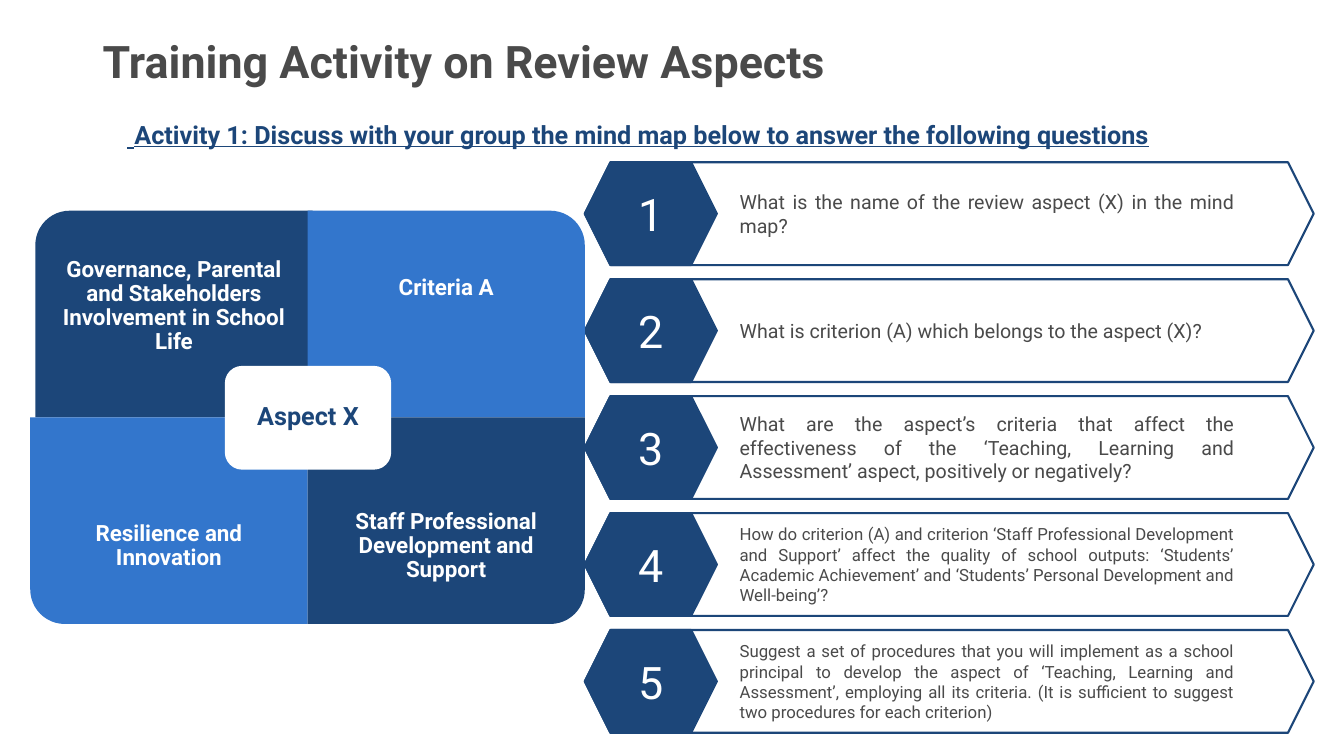
from dataclasses import dataclass

from pptx import Presentation
from pptx.dml.color import RGBColor
from pptx.enum.shapes import MSO_SHAPE
from pptx.enum.text import MSO_ANCHOR, PP_ALIGN
from pptx.util import Emu, Pt

PX = 9144  # one px is a hundredth of an inch


@dataclass(frozen=True)
class Theme:
    font: str = "Roboto"
    navy: str = "1C4679"
    blue: str = "3376CC"
    grey: str = "4A4A4A"
    white: str = "FFFFFF"
    title: int = 32
    number: int = 32
    subtitle: int = 18
    centre: int = 18
    tile: int = 16
    question: int = 14
    long_question: int = 12


THEME = Theme()

QUESTIONS = [
    ("What is the name of the review aspect (X) in the mind map?", THEME.question),
    ("What is criterion (A) which belongs to the aspect (X)?", THEME.question),
    ("What are the aspect’s criteria that affect the effectiveness of the "
     "‘Teaching, Learning and Assessment’ aspect, positively or negatively?",
     THEME.question),
    ("How do criterion (A) and criterion ‘Staff Professional Development and "
     "Support’ affect the quality of school outputs: ‘Students’ Academic "
     "Achievement’ and ‘Students’ Personal Development and Well-being’?",
     THEME.long_question),
    ("Suggest a set of procedures that you will implement as a school principal "
     "to develop the aspect of ‘Teaching, Learning and Assessment’, employing "
     "all its criteria. (It is sufficient to suggest two procedures for each "
     "criterion)", THEME.long_question),
]

# Label, tile left, tile top, label top, rotation, fill
TILES = [
    ("Governance, Parental and Stakeholders Involvement in School Life",
     35, 209, 227, 270, THEME.navy),
    ("Criteria A", 305, 209, 209, 0, THEME.blue),
    ("Resilience and Innovation", 30, 414, 465, 180, THEME.blue),
    ("Staff Professional Development and Support", 305, 414, 465, 90, THEME.navy),
]
TILE_WIDTH, TILE_HEIGHT, LABEL_HEIGHT = 275, 205, 154


def place(left, top, width, height):
    return [Emu(value * PX) for value in (left, top, width, height)]


def write(shape, text, size, color, bold=False, align=PP_ALIGN.CENTER,
          spacing=1.0, anchor=MSO_ANCHOR.MIDDLE):
    """Fill a shape with one formatted paragraph and return the paragraph."""
    frame = shape.text_frame
    frame.word_wrap = True
    frame.vertical_anchor = anchor
    para = frame.paragraphs[0]
    para.text = text
    para.alignment = align
    para.line_spacing = spacing
    font = para.runs[0].font
    font.name, font.size, font.bold = THEME.font, Pt(size), bold
    font.color.rgb = RGBColor.from_string(color)
    return para


def add_text(page, bounds, *args, **options):
    box = page.shapes.add_textbox(*place(*bounds))
    return box, write(box, *args, **options)


def add_block(page, preset, bounds, fill, line=None):
    shape = page.shapes.add_shape(preset, *place(*bounds))
    shape.shadow.inherit = False
    shape.fill.solid()
    shape.fill.fore_color.rgb = RGBColor.from_string(fill)
    if line:
        shape.line.color.rgb = RGBColor.from_string(line)
        shape.line.width = Pt(1.5)
    else:
        shape.line.fill.background()
    return shape


def add_question(page, number, text, size):
    top = 161 + 116 * (number - 1)
    banner = add_block(page, MSO_SHAPE.HEXAGON, (580, top, 723, 102),
                       THEME.white, THEME.navy)
    para = write(banner, text, size, THEME.grey, align=PP_ALIGN.JUSTIFY)
    para._p.get_or_add_pPr().set("marL", str(75 * PX))
    badge = add_block(page, MSO_SHAPE.HEXAGON, (580, top, 131, 102),
                      THEME.navy, THEME.navy)
    write(badge, str(number), THEME.number, THEME.white)


def add_tile(page, label, left, top, label_top, rotation, fill):
    # A quarter turn swaps the sides around the same centre
    width, height = TILE_WIDTH, TILE_HEIGHT
    bounds = (left, top, width, height)
    if rotation % 180:
        shift = (width - height) // 2
        bounds = (left + shift, top - shift, height, width)
    tile = add_block(page, MSO_SHAPE.ROUND_1_RECTANGLE, bounds, fill)
    tile.rotation = rotation
    box, _ = add_text(page, (left, label_top, width, LABEL_HEIGHT), label,
                      THEME.tile, THEME.white, bold=True, spacing=0.9)
    box.text_frame.margin_left = box.text_frame.margin_right = Emu(12 * PX)


def main():
    deck = Presentation()
    deck.slide_width, deck.slide_height = Emu(1333 * PX), Emu(750 * PX)
    page = deck.slides.add_slide(deck.slide_layouts[6])

    # Headings
    add_text(page, (92, 23, 1115, 81), "Training Activity on Review Aspects",
             THEME.title, THEME.grey, bold=True, align=PP_ALIGN.LEFT, spacing=0.9)
    _, subtitle = add_text(
        page, (92, 111, 1082, 43),
        "Activity 1: Discuss with your group the mind map below to answer "
        "the following questions ",
        THEME.subtitle, THEME.navy, bold=True, spacing=1.07, anchor=MSO_ANCHOR.TOP)
    subtitle.runs[0].font.underline = True
    subtitle._p.get_or_add_pPr().set("rtl", "1")

    # Questions
    for number, (text, size) in enumerate(QUESTIONS, start=1):
        add_question(page, number, text, size)

    # Mind map
    for tile in TILES:
        add_tile(page, *tile)
    centre = add_block(page, MSO_SHAPE.ROUNDED_RECTANGLE, (223, 363, 165, 103),
                       THEME.white)
    write(centre, "Aspect X", THEME.centre, THEME.navy, bold=True, spacing=0.9)

    deck.save("out.pptx")


if __name__ == "__main__":
    main()
